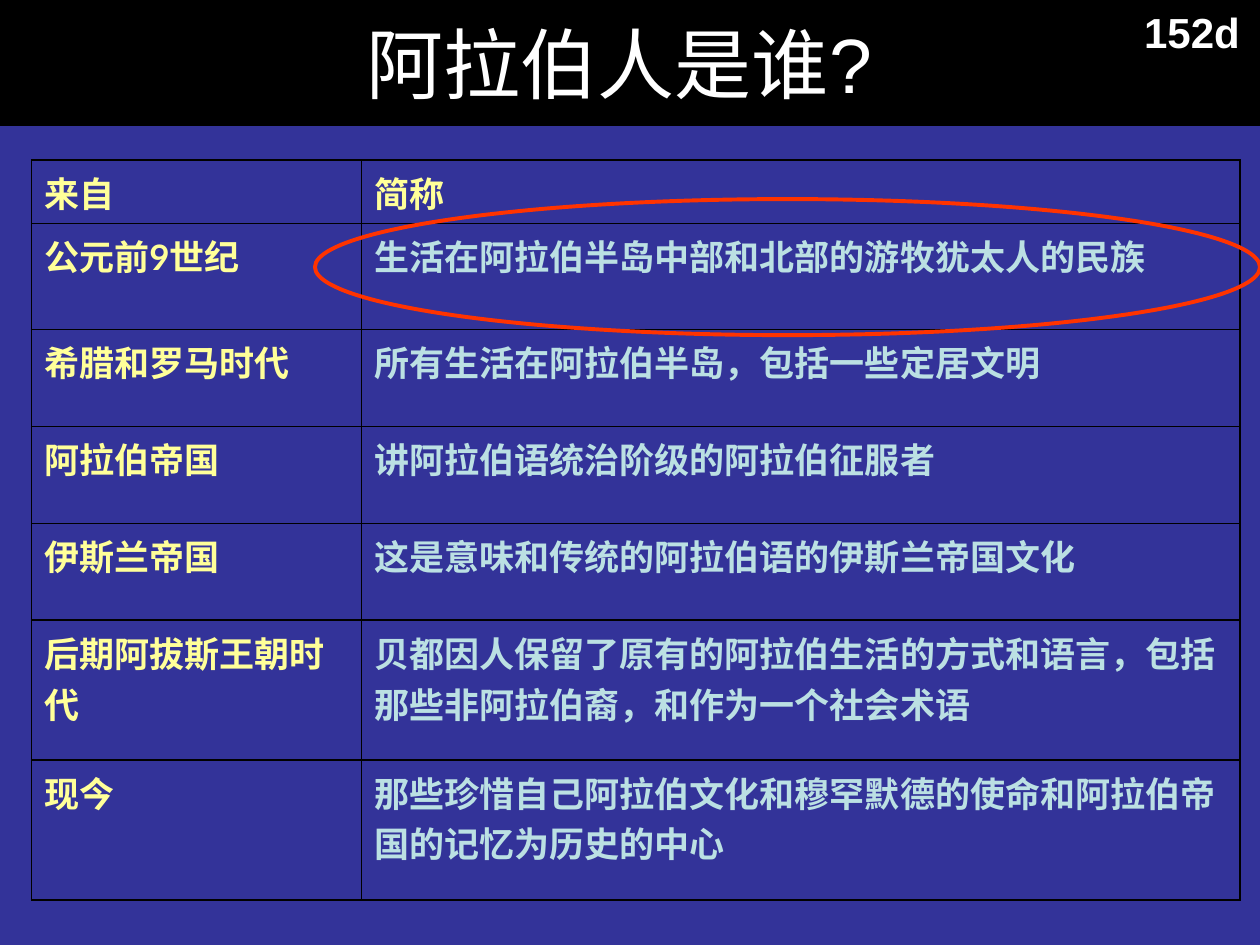
from pptx import Presentation
from pptx.dml.color import RGBColor
from pptx.enum import shapes, text
from pptx.oxml import parse_xml
from pptx.oxml.ns import nsdecls
from pptx.util import Inches, Pt

NAVY = RGBColor(0x33, 0x33, 0x99)
BLACK = RGBColor(0, 0, 0)
WHITE = RGBColor(0xFF, 0xFF, 0xFF)
YELLOW = RGBColor(0xFF, 0xFF, 0x99)
PALE_BLUE = RGBColor(0xBB, 0xE0, 0xE3)
RED = RGBColor(0xFF, 0x33, 0x00)

COL_WIDTHS = [2.62, 6.97]
ROW_HEIGHTS = [0.44, 0.84, 0.77, 0.77, 0.77, 1.11, 1.11]
ARAB_MEANINGS = [
    ("来自", "简称"),
    ("公元前9世纪", "生活在阿拉伯半岛中部和北部的游牧犹太人的民族"),
    ("希腊和罗马时代", "所有生活在阿拉伯半岛，包括一些定居文明"),
    ("阿拉伯帝国", "讲阿拉伯语统治阶级的阿拉伯征服者"),
    ("伊斯兰帝国", "这是意味和传统的阿拉伯语的伊斯兰帝国文化"),
    ("后期阿拔斯王朝时代",
     "贝都因人保留了原有的阿拉伯生活的方式和语言，包括那些非阿拉伯裔，和作为一个社会术语"),
    ("现今", "那些珍惜自己阿拉伯文化和穆罕默德的使命和阿拉伯帝国的记忆为历史的中心"),
]


class Deck:
    heading_font = "Arial"
    table_font = "Lato"

    def __init__(self, prs):
        self.s = prs.slides.add_slide(prs.slide_layouts[6])
        fill = self.s.background.fill
        fill.solid()
        fill.fore_color.rgb = NAVY

    def add_text(self, tf, words, size, font, color, bold=False, align=None):
        p = tf.paragraphs[0]
        p.alignment = align
        r = p.add_run()
        r.text = words
        r.font.size = Pt(size)
        r.font.name = font
        r.font.bold = bold
        r.font.color.rgb = color

    def title_bar(self, words, *box):
        sp = self.s.shapes.add_shape(shapes.MSO_SHAPE.RECTANGLE, *map(Inches, box))
        sp.shadow.inherit = False
        sp.fill.solid()
        sp.fill.fore_color.rgb = BLACK
        sp.line.fill.background()
        sp.text_frame.vertical_anchor = text.MSO_ANCHOR.MIDDLE
        self.add_text(sp.text_frame, words, 44, self.heading_font, WHITE,
                      align=text.PP_ALIGN.CENTER)

    def page_label(self, words, *box):
        tf = self.s.shapes.add_textbox(*map(Inches, box)).text_frame
        tf.word_wrap = True
        tf.auto_size = text.MSO_AUTO_SIZE.SHAPE_TO_FIT_TEXT
        self.add_text(tf, words, 24, self.heading_font, WHITE, True, text.PP_ALIGN.CENTER)

    def ring(self, *box):
        sp = self.s.shapes.add_shape(shapes.MSO_SHAPE.OVAL, *map(Inches, box))
        sp.shadow.inherit = False
        sp.fill.background()
        sp.line.color.rgb = RED
        sp.line.width = Pt(2.25)

    def table(self, rows, left, top):
        size = Inches(sum(COL_WIDTHS)), Inches(sum(ROW_HEIGHTS))
        tbl = self.s.shapes.add_table(len(rows), len(COL_WIDTHS),
                                      Inches(left), Inches(top), *size).table
        tbl.first_row = tbl.horz_banding = False
        for col, width in zip(tbl.columns, COL_WIDTHS):
            col.width = Inches(width)
        for row, height in zip(tbl.rows, ROW_HEIGHTS):
            row.height = Inches(height)
        for i, row in enumerate(rows):
            for j, words in enumerate(row):
                cell = tbl.cell(i, j)
                color = YELLOW if i == 0 or j == 0 else PALE_BLUE
                self.add_text(cell.text_frame, words, 20, self.table_font, color, True)
                self.border(cell)
                cell.fill.background()

    def border(self, cell):
        tc_pr = cell._tc.get_or_add_tcPr()
        for side in "LRTB":
            tc_pr.append(parse_xml(
                f'<a:ln{side} {nsdecls("a")} w="{Pt(1)}"><a:solidFill>'
                f'<a:srgbClr val="{BLACK}"/></a:solidFill></a:ln{side}>'))


def main():
    prs = Presentation()
    prs.slide_width, prs.slide_height = Inches(10), Inches(7.5)
    deck = Deck(prs)
    deck.title_bar("阿拉伯人是谁? ", 0, 0, 10, 1)
    deck.table(ARAB_MEANINGS, 0.25, 1.27)
    deck.ring(2.5, 1.58, 7.5, 1.08)
    deck.page_label("152d", 8.92, 0, 1.08, 0.51)
    prs.save("out.pptx")


if __name__ == "__main__":
    main()
